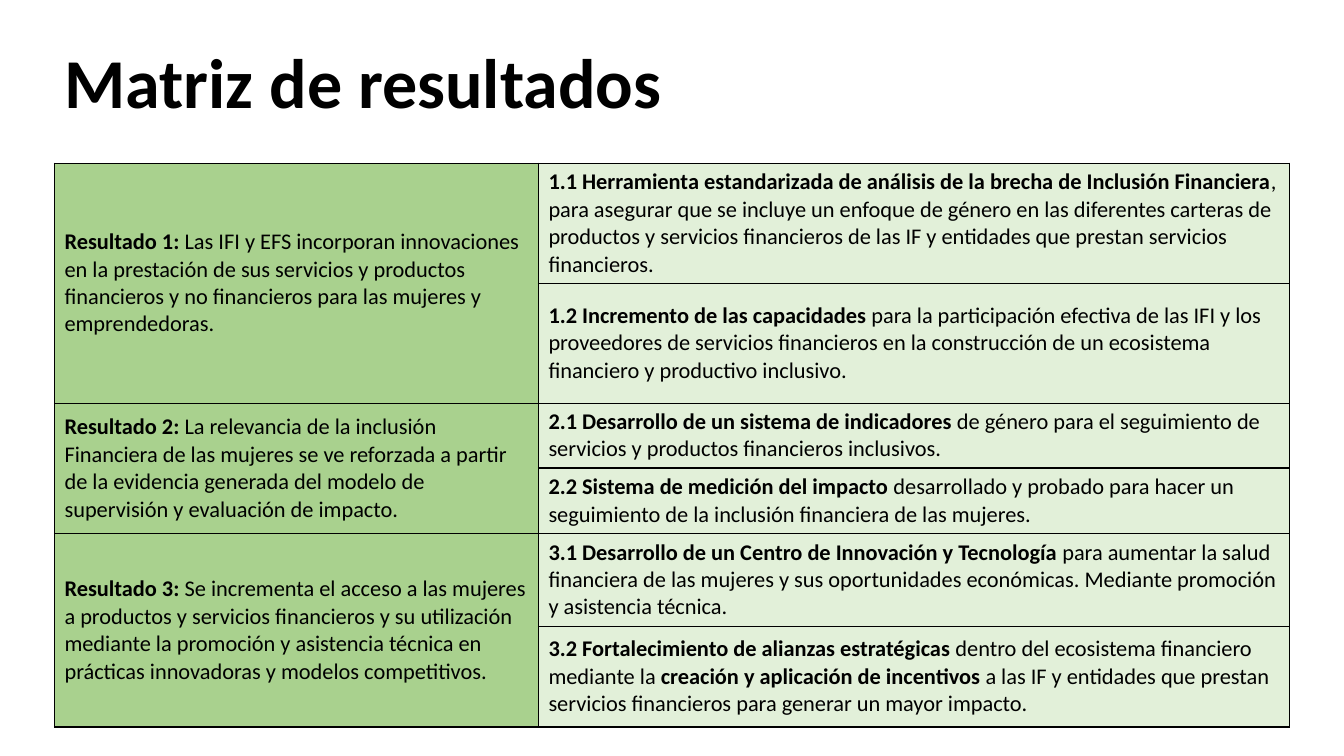
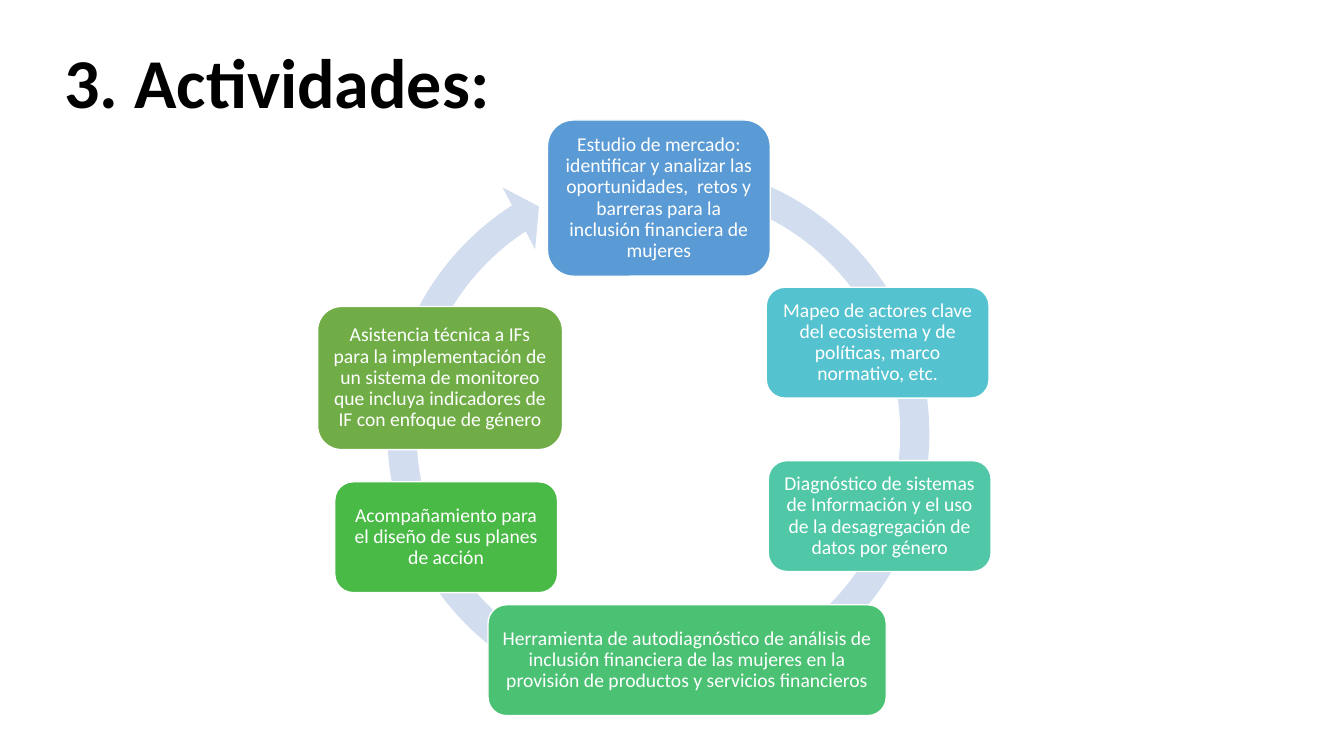
"""Build the results matrix and the activity cycle slides."""
import dataclasses

import lxml.etree
import pptx
import pptx.dml.color
import pptx.enum.shapes
import pptx.enum.text
import pptx.oxml.ns
import pptx.presentation
import pptx.shapes.autoshape
import pptx.slide
import pptx.table
import pptx.text.text
import pptx.util

Inches = pptx.util.Inches
Align = pptx.enum.text.PP_ALIGN
Anchor = pptx.enum.text.MSO_ANCHOR
Shape = pptx.enum.shapes.MSO_SHAPE
FONT = "Calibri"
BLACK, WHITE, RING = "000000", "FFFFFF", "D2DEEF"
DARK, LIGHT = "A9D18E", "E2F0D9"
COLS = (4.8, 7.45)
ARC = (0.05, 3.13, 142.22, 171.3, 0.06)


@dataclasses.dataclass(frozen=True)
class Goal:
    """A result with the outputs under it, as text and row height."""
    text: str
    gains: tuple[tuple[str, float], ...]


@dataclasses.dataclass(frozen=True)
class Step:
    """One rounded box of the cycle."""
    text: str
    fill: str
    left: float
    top: float
    width: float = 2.21
    height: float = 1.1


GOALS = (
    Goal("*Resultado 1: *Las IFI y EFS incorporan innovaciones en la prestación de sus servicios y "
         "productos financieros y no financieros para las mujeres y emprendedoras.",
         (("*1.1 Herramienta estandarizada de análisis de la brecha de Inclusión Financiera*, para "
           "asegurar que se incluye un enfoque de género en las diferentes carteras de productos y "
           "servicios financieros de las IF y entidades que prestan servicios financieros.", 1.19),
          ("*1.2 Incremento de las capacidades* para la participación efectiva de las IFI y los "
           "proveedores de servicios financieros en la construcción de un ecosistema financiero y "
           "productivo inclusivo.", 1.19))),
    Goal("*Resultado 2: *La relevancia de la inclusión Financiera de las mujeres se ve reforzada a "
         "partir de la evidencia generada del modelo de supervisión y evaluación de impacto.",
         (("*2.1 Desarrollo de un sistema de indicadores *de género para el seguimiento de "
           "servicios y productos financieros inclusivos.", 0.64),
          ("*2.2 Sistema de medición del impacto* desarrollado y probado para hacer un seguimiento "
           "de la inclusión financiera de las mujeres.", 0.65))),
    Goal("*Resultado 3: *Se incrementa el acceso a las mujeres a productos y servicios financieros "
         "y su utilización mediante la promoción y asistencia técnica en prácticas innovadoras y "
         "modelos competitivos.",
         (("*3.1 Desarrollo de un Centro de Innovación y Tecnología* para aumentar la salud "
           "financiera de las mujeres y sus oportunidades económicas. Mediante promoción y "
           "asistencia técnica.", 0.92),
          ("*3.2 Fortalecimiento de alianzas estratégicas* dentro del ecosistema financiero "
           "mediante la *creación y aplicación de incentivos *a las IF y entidades que prestan "
           "servicios financieros para generar un mayor impacto.", 1))),
)

STEPS = (
    Step("Estudio de mercado: identificar y analizar las oportunidades,  retos y barreras para la "
         "inclusión financiera de mujeres", "5B9BD5", 5.43, 1.19, height=1.55),
    Step("Mapeo de actores clave del ecosistema y de políticas, marco normativo, etc.",
         "55C3CF", 7.6, 2.85),
    Step("Diagnóstico de sistemas de Información y el uso de la desagregación de datos por género",
         "50C8A7", 7.62, 4.57),
    Step("Herramienta de autodiagnóstico de análisis de inclusión financiera de las mujeres en la "
         "provisión de productos y servicios financieros", "4BC174", 4.84, 6, width=3.95),
    Step("Acompañamiento para el diseño de sus planes de acción", "4ABA46", 3.32, 4.78),
    Step("Asistencia técnica a IFs para la implementación de un sistema de monitoreo que incluya "
         "indicadores de IF con enfoque de género", "70AD47", 3.15, 3.04, 2.43, 1.42),
)


def tint(code: str) -> pptx.dml.color.RGBColor:
    """Turn a hex string into a colour."""
    return pptx.dml.color.RGBColor.from_string(code)


def write(frame: pptx.text.text.TextFrame, text: str, *, size: float, color: str = BLACK,
          align: Align = Align.LEFT, space: float = 1.0) -> None:
    """Fill a frame with one paragraph, bold between asterisks."""
    frame.word_wrap = True
    line = frame.paragraphs[0]
    line.alignment = align
    line.line_spacing = space
    for spot, piece in enumerate(text.split("*")):
        if piece:
            run = line.add_run()
            run.text = piece
            run.font.name = FONT
            run.font.size = pptx.util.Pt(size)
            run.font.bold = spot % 2 == 1
            run.font.color.rgb = tint(color)


def start(deck: pptx.presentation.Presentation, title: str) -> pptx.slide.Slide:
    """Add a slide with the shared title style."""
    slide = deck.slides.add_slide(deck.slide_layouts[5])
    head = slide.shapes.title
    head.left, head.top = Inches(0.54), Inches(0.4)
    head.width, head.height = Inches(11.87), Inches(0.9)
    frame = head.text_frame
    frame.auto_size = pptx.enum.text.MSO_AUTO_SIZE.NONE
    frame.vertical_anchor = Anchor.MIDDLE
    write(frame, f"*{title}*", size=50, space=0.9)
    return slide


def frame_cell(cell: pptx.table._Cell, fill: str) -> None:
    """Give a cell thin black borders and a plain fill."""
    props = cell._tc.get_or_add_tcPr()
    name = pptx.oxml.ns.qn
    for side in ("a:lnL", "a:lnR", "a:lnT", "a:lnB"):
        edge = lxml.etree.SubElement(props, name(side), w=str(pptx.util.Pt(1)))
        paint = lxml.etree.SubElement(edge, name("a:solidFill"))
        lxml.etree.SubElement(paint, name("a:srgbClr"), val=BLACK)
    cell.fill.solid()
    cell.fill.fore_color.rgb = tint(fill)
    cell.vertical_anchor = Anchor.MIDDLE


def draw_grid(slide: pptx.slide.Slide) -> None:
    """Draw the results as a table with merged left cells."""
    gains = [gain for goal in GOALS for gain in goal.gains]
    high = sum(tall for _, tall in gains)
    grid = slide.shapes.add_table(len(gains), len(COLS), Inches(0.54), Inches(1.62),
                                  Inches(sum(COLS)), Inches(high)).table
    grid.first_row = grid.horz_banding = False
    for col, wide in zip(grid.columns, COLS):
        col.width = Inches(wide)
    for row, (text, tall) in enumerate(gains):
        grid.rows[row].height = Inches(tall)
        for col, fill in enumerate((DARK, LIGHT)):
            frame_cell(grid.cell(row, col), fill)
        write(grid.cell(row, 1).text_frame, text, size=16)
    row = 0
    for goal in GOALS:
        last = row + len(goal.gains) - 1
        grid.cell(row, 0).merge(grid.cell(last, 0))
        write(grid.cell(row, 0).text_frame, goal.text, size=16)
        row = last + 1


def add_form(slide: pptx.slide.Slide, kind: Shape, fill: str, left: float, top: float,
             width: float, height: float) -> pptx.shapes.autoshape.Shape:
    """Add a flat shape with no outline."""
    form = slide.shapes.add_shape(kind, Inches(left), Inches(top), Inches(width), Inches(height))
    form.shadow.inherit = False
    form.fill.solid()
    form.fill.fore_color.rgb = tint(fill)
    form.line.fill.background()
    return form


def draw_step(slide: pptx.slide.Slide, step: Step) -> None:
    """Draw one box of the cycle with its label."""
    box = add_form(slide, Shape.ROUNDED_RECTANGLE, step.fill, step.left, step.top,
                   step.width, step.height)
    box.line.color.rgb = tint(WHITE)
    box.line.width = pptx.util.Pt(1)
    frame = box.text_frame
    frame.margin_left = frame.margin_right = Inches(0.06)
    frame.margin_top = frame.margin_bottom = Inches(0.06)
    frame.vertical_anchor = Anchor.MIDDLE
    write(frame, step.text, size=14, color=WHITE, align=Align.CENTER, space=0.9)


def main() -> None:
    """Build and save the deck."""
    deck = pptx.Presentation()
    deck.slide_width, deck.slide_height = Inches(13.33), Inches(7.5)
    draw_grid(start(deck, "Matriz de resultados"))
    slide = start(deck, "3. Actividades:")
    ring = add_form(slide, Shape.CIRCULAR_ARROW, RING, 3.64, 1.41, 5.78, 5.78)
    for spot, value in enumerate(ARC):
        ring.adjustments[spot] = value
    for step in STEPS:
        draw_step(slide, step)
    deck.save("out.pptx")


if __name__ == "__main__":
    main()
